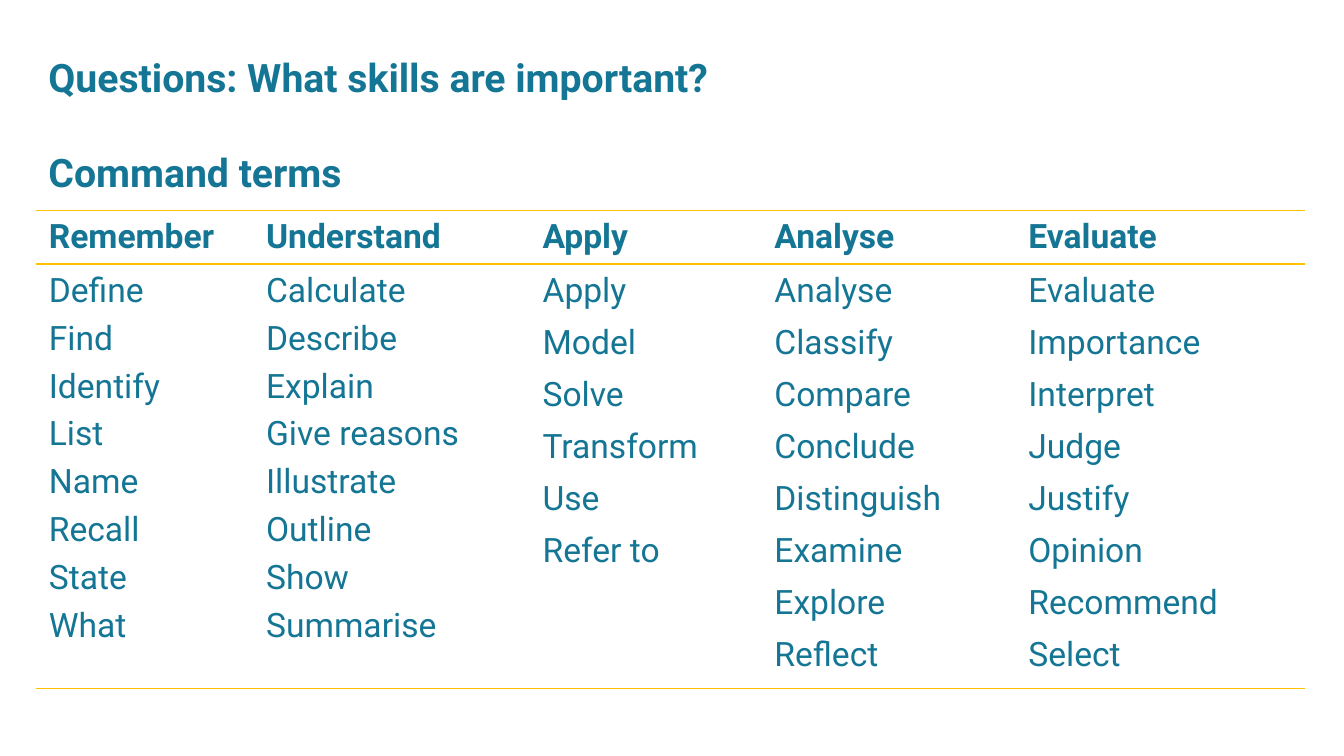
from dataclasses import dataclass

import lxml.etree
import pptx
import pptx.dml.color
import pptx.enum.shapes
import pptx.enum.text
import pptx.oxml.ns
import pptx.slide
import pptx.table
import pptx.text.text
import pptx.util

Pt = pptx.util.Pt
RGBColor = pptx.dml.color.RGBColor


@dataclass(frozen=True)
class Theme:
    font: str = "Roboto"
    ink: str = "147694"
    rule: str = "FFC000"
    paper: str = "FFFFFF"
    heading_size: float = 28
    table_size: float = 24


@dataclass(frozen=True)
class Skill:
    name: str
    width: float
    space_before: float
    terms: tuple[str, ...]


THEME = Theme()
HEADER_HEIGHT = 38.4
TERMS_HEIGHT = 303
SKILLS = (
    Skill("Remember", 155.2, 3, (
        "Define", "Find", "Identify", "List", "Name", "Recall", "State", "What")),
    Skill("Understand", 197.5, 3, (
        "Calculate", "Describe", "Explain", "Give reasons", "Illustrate",
        "Outline", "Show", "Summarise")),
    Skill("Apply", 165.6, 6, (
        "Apply", "Model", "Solve", "Transform", "Use", "Refer to")),
    Skill("Analyse", 181.4, 6, (
        "Analyse", "Classify", "Compare", "Conclude", "Distinguish",
        "Examine", "Explore", "Reflect")),
    Skill("Evaluate", 207, 6, (
        "Evaluate", "Importance", "Interpret", "Judge", "Justify",
        "Opinion", "Recommend", "Select")),
)


def add_text(frame: pptx.text.text.TextFrame, text: str, *, size: float,
             bold: bool = False, before: float = 0, after: float = 0) -> None:
    para = frame.add_paragraph() if frame.text else frame.paragraphs[0]
    para.alignment = pptx.enum.text.PP_ALIGN.LEFT
    para.space_before = Pt(before)
    para.space_after = Pt(after)
    span = para.add_run()
    span.text = text
    span.font.name = THEME.font
    span.font.size = Pt(size)
    span.font.bold = bold
    span.font.color.rgb = RGBColor.from_string(THEME.ink)


def set_borders(cell: pptx.table._Cell) -> None:
    qn = pptx.oxml.ns.qn
    properties = cell._tc.get_or_add_tcPr()
    for position, side in enumerate(("lnL", "lnR", "lnT", "lnB")):
        line = lxml.etree.Element(qn(f"a:{side}"), w=str(Pt(1)))
        if side in ("lnT", "lnB"):
            fill = lxml.etree.SubElement(line, qn("a:solidFill"))
            lxml.etree.SubElement(fill, qn("a:srgbClr"), val=THEME.rule)
        else:
            lxml.etree.SubElement(line, qn("a:noFill"))
        properties.insert(position, line)


def style_cell(cell: pptx.table._Cell) -> None:
    cell.margin_left = cell.margin_right = Pt(9.4)
    cell.margin_top = cell.margin_bottom = Pt(5)
    cell.vertical_anchor = pptx.enum.text.MSO_ANCHOR.TOP
    cell.fill.solid()
    cell.fill.fore_color.rgb = RGBColor.from_string(THEME.paper)
    set_borders(cell)


def add_headings(page: pptx.slide.Slide) -> None:
    box = page.shapes.add_shape(
        pptx.enum.shapes.MSO_SHAPE.RECTANGLE, Pt(27.5), Pt(34.5), Pt(863.3), Pt(138.2))
    box.shadow.inherit = False
    box.fill.solid()
    box.fill.fore_color.rgb = RGBColor.from_string(THEME.paper)
    box.line.fill.background()
    frame = box.text_frame
    frame.word_wrap = True
    frame.vertical_anchor = pptx.enum.text.MSO_ANCHOR.TOP
    add_text(frame, "Questions: What skills are important?",
             size=THEME.heading_size, bold=True)
    add_text(frame, "Command terms", size=THEME.heading_size, bold=True, before=34)


def add_skill_table(page: pptx.slide.Slide) -> None:
    width = sum(skill.width for skill in SKILLS)
    table = page.shapes.add_table(
        2, len(SKILLS), Pt(25.5), Pt(150.2), Pt(width),
        Pt(HEADER_HEIGHT + TERMS_HEIGHT)).table
    table.first_row = False
    table.horz_banding = False
    table.rows[0].height = Pt(HEADER_HEIGHT)
    table.rows[1].height = Pt(TERMS_HEIGHT)
    for index, skill in enumerate(SKILLS):
        table.columns[index].width = Pt(skill.width)
        header, body = table.cell(0, index), table.cell(1, index)
        style_cell(header)
        style_cell(body)
        add_text(header.text_frame, skill.name, size=THEME.table_size, bold=True)
        for term in skill.terms:
            add_text(body.text_frame, term, size=THEME.table_size,
                     before=skill.space_before, after=3)


def main() -> None:
    deck = pptx.Presentation()
    deck.slide_width = Pt(960)
    deck.slide_height = Pt(540)
    page = deck.slides.add_slide(deck.slide_layouts[6])
    add_headings(page)
    add_skill_table(page)
    deck.save("out.pptx")


if __name__ == "__main__":
    main()
